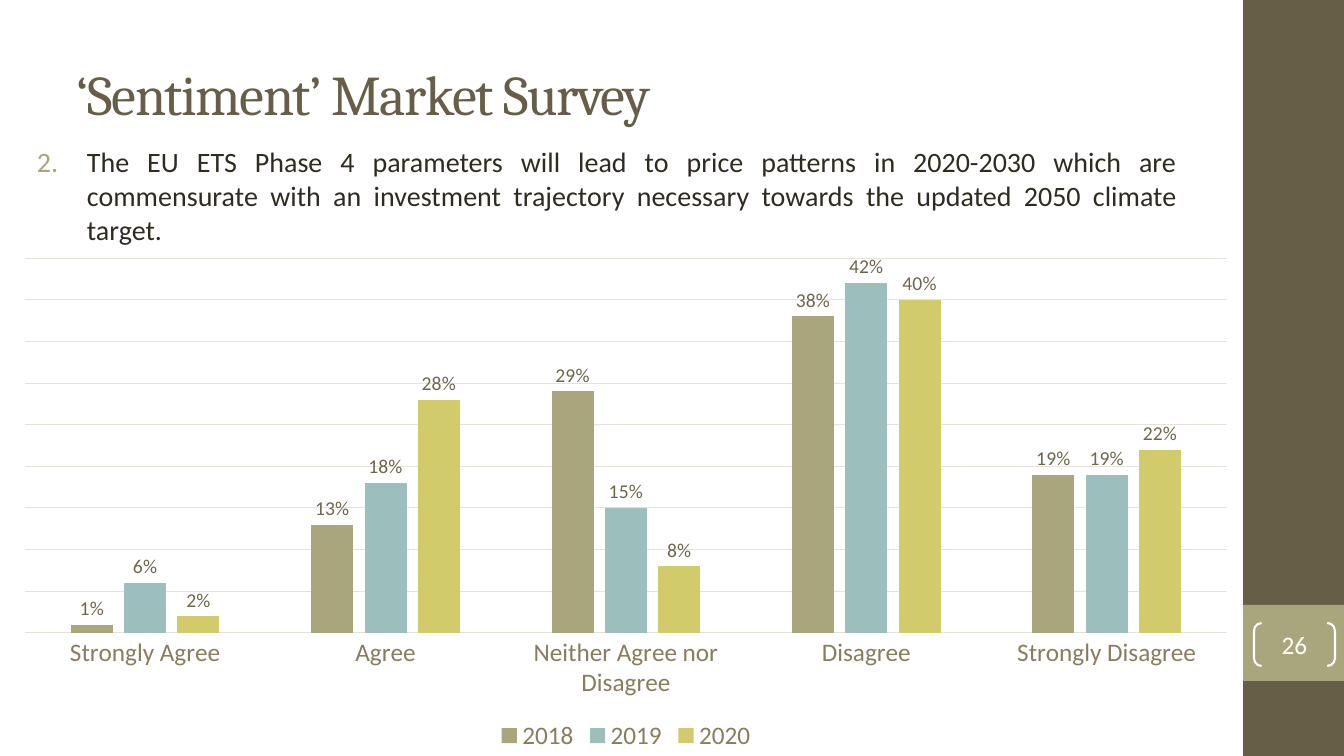
from lxml.etree import SubElement
from pptx import Presentation
from pptx.chart.data import CategoryChartData
from pptx.dml.color import RGBColor
from pptx.enum.chart import XL_CHART_TYPE, XL_LABEL_POSITION, XL_LEGEND_POSITION, XL_TICK_MARK
from pptx.enum.shapes import MSO_SHAPE
from pptx.enum.text import MSO_ANCHOR, PP_ALIGN
from pptx.oxml.ns import qn
from pptx.util import Emu, Pt

EMU_PER_PX = 914400 / 100.8
BROWN, OLIVE, TEAL, YELLOW = "675E47", "A9A57C", "9CBEBD", "D2CB6C"
INK, WHITE, GRID, AXIS_TEXT, LABEL_TEXT = "2F2B20", "FFFFFF", "E5E2D9", "897D5D", "6F664C"
ANSWERS = ["Strongly Agree", "Agree", "Neither Agree nor Disagree", "Disagree", "Strongly Disagree"]
SURVEYS = [
    ("2018", OLIVE, [0.01, 0.13, 0.29, 0.38, 0.19]),
    ("2019", TEAL, [0.06, 0.18, 0.15, 0.42, 0.19]),
    ("2020", YELLOW, [0.02, 0.28, 0.08, 0.40, 0.22]),
]


def px(*lengths):
    return [Emu(round(length * EMU_PER_PX)) for length in lengths]


def color(hex_text):
    return RGBColor.from_string(hex_text)


def style_font(font, size, hex_text, name="Calibri"):
    font.size = Pt(size)
    font.name = name
    font.color.rgb = color(hex_text)


def write_text(shape, text, size, hex_text, name="Calibri", align=PP_ALIGN.LEFT,
               anchor=MSO_ANCHOR.TOP, spacing=None, margin=None):
    """Fill a shape with one paragraph; spacing is in hundredths of a point."""
    frame = shape.text_frame
    frame.word_wrap = True
    frame.vertical_anchor = anchor
    if margin is not None:
        frame.margin_left = frame.margin_right = frame.margin_top = frame.margin_bottom = margin
    para = frame.paragraphs[0]
    para.alignment = align
    span = para.add_run()
    span.text = text
    style_font(span.font, size, hex_text, name)
    if spacing is not None:
        span.font._element.set("spc", str(spacing))
    return para


def number_paragraph(para, start, hex_text, left, hanging):
    properties = para._p.get_or_add_pPr()
    properties.set("marL", str(left))
    properties.set("indent", str(-hanging))
    bullet_color = SubElement(properties, qn("a:buClr"))
    SubElement(bullet_color, qn("a:srgbClr"), val=hex_text)
    SubElement(properties, qn("a:buFont"), typeface="+mj-lt")
    SubElement(properties, qn("a:buAutoNum"), type="arabicPeriod", startAt=str(start))


def add_block(page, bounds, hex_text):
    block = page.shapes.add_shape(MSO_SHAPE.RECTANGLE, *px(*bounds))
    block.shadow.inherit = False
    block.fill.solid()
    block.fill.fore_color.rgb = color(hex_text)
    block.line.fill.background()


def add_page_number(page, bounds, number):
    bracket = page.shapes.add_shape(MSO_SHAPE.DOUBLE_BRACKET, *px(*bounds))
    bracket.adjustments[0] = 0.18
    bracket.shadow.inherit = False
    bracket.fill.background()
    bracket.line.color.rgb = color(WHITE)
    bracket.line.width = Pt(1.5)
    write_text(bracket, number, 18, WHITE, align=PP_ALIGN.CENTER, anchor=MSO_ANCHOR.MIDDLE, margin=0)


def style_line(line):
    line.color.rgb = color(GRID)
    line.width = Pt(0.75)


def style_series(series, hex_text):
    series.format.fill.solid()
    series.format.fill.fore_color.rgb = color(hex_text)
    series.invert_if_negative = False
    labels = series.data_labels
    labels.show_value = True
    labels.position = XL_LABEL_POSITION.OUTSIDE_END
    labels.number_format = "0%"
    labels.number_format_is_linked = False
    style_font(labels.font, 14, LABEL_TEXT)


def add_survey_chart(page, bounds):
    chart_data = CategoryChartData(number_format="0%")
    chart_data.categories = ANSWERS
    for year, _, shares in SURVEYS:
        chart_data.add_series(year, shares)
    chart = page.shapes.add_chart(XL_CHART_TYPE.COLUMN_CLUSTERED, *px(*bounds), chart_data).chart
    chart.has_title = False
    style_font(chart.font, 10, INK)

    plot = chart.plots[0]
    plot.vary_by_categories = False
    plot.gap_width = 219
    plot.overlap = -27
    for series, (_, hex_text, _) in zip(plot.series, SURVEYS):
        style_series(series, hex_text)

    answer_axis = chart.category_axis
    answer_axis.major_tick_mark = XL_TICK_MARK.NONE
    answer_axis.minor_tick_mark = XL_TICK_MARK.NONE
    style_line(answer_axis.format.line)
    style_font(answer_axis.tick_labels.font, 18, AXIS_TEXT)

    share_axis = chart.value_axis
    share_axis.visible = False
    share_axis.minimum_scale = 0
    share_axis.maximum_scale = 0.45
    share_axis.major_unit = 0.05
    share_axis.has_major_gridlines = True
    style_line(share_axis.major_gridlines.format.line)

    chart.has_legend = True
    chart.legend.position = XL_LEGEND_POSITION.BOTTOM
    chart.legend.include_in_layout = False
    style_font(chart.legend.font, 18, AXIS_TEXT)


def main():
    deck = Presentation()
    deck.slide_width, deck.slide_height = px(1344, 756)
    page = deck.slides.add_slide(deck.slide_layouts[6])

    add_block(page, (1243, 0, 101, 756), BROWN)
    add_block(page, (1243, 605, 101, 76), OLIVE)

    title = page.shapes.add_textbox(*px(67, 30, 1120, 126))
    write_text(title, "‘Sentiment’ Market Survey", 40, BROWN, name="Cambria",
               anchor=MSO_ANCHOR.MIDDLE, spacing=-100)
    add_page_number(page, (1254, 623, 81, 43), "26")

    statement = page.shapes.add_textbox(*px(15, 140, 1172, 32))
    para = write_text(
        statement,
        "The EU ETS Phase 4 parameters will lead to price patterns in 2020-2030 which are "
        "commensurate with an investment trajectory necessary towards the updated 2050 climate target.",
        20, INK, align=PP_ALIGN.JUSTIFY)
    para.space_before = Pt(4)
    number_paragraph(para, 2, OLIVE, *px(62, 50))

    add_survey_chart(page, (0, 248, 1252, 508))
    deck.save("out.pptx")


if __name__ == "__main__":
    main()
